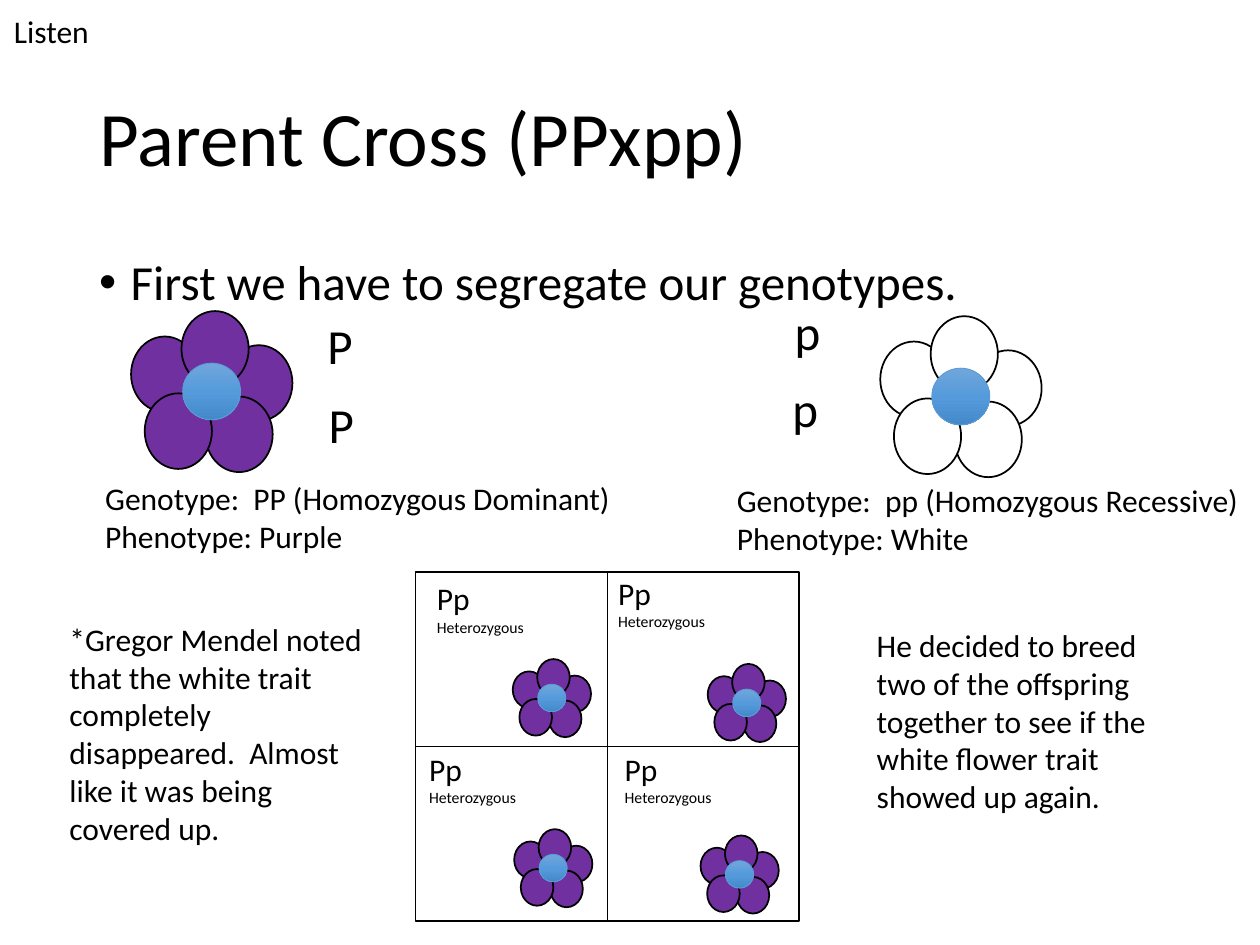
from lxml import etree
from pptx import Presentation
from pptx.dml.color import RGBColor
from pptx.enum.shapes import MSO_CONNECTOR, MSO_SHAPE
from pptx.enum.text import MSO_ANCHOR, MSO_AUTO_SIZE, PP_ALIGN
from pptx.oxml.ns import qn
from pptx.util import Pt

ELLIPSE, RECTANGLE = MSO_SHAPE.OVAL, MSO_SHAPE.RECTANGLE
STRAIGHT = MSO_CONNECTOR.STRAIGHT
LEFT, MIDDLE = PP_ALIGN.LEFT, MSO_ANCHOR.MIDDLE
GROW, FIXED = MSO_AUTO_SIZE.SHAPE_TO_FIT_TEXT, MSO_AUTO_SIZE.NONE

FONT = "Calibri"
COLORS = {
    "black": "000000",
    "white": "FFFFFF",
    "purple": "7030A0",
    "centre_line": "5B9BD5",
}
CENTRE_GRADIENT = [(0, "71A6DB"), (50, "559BDB"), (100, "448ACA")]

# Full-size flower, measured from its top left corner
PETALS = [(0, 14.5), (53.8, 19.5), (42.5, 48.8), (7.8, 47), (28.8, 0)]
PETAL_SIZE = (38.4, 43.2)
CENTRE = (29.5, 29.7, 33.1, 32.4)
SMALL = 0.485

OFFSPRING = [("Pp", 18), ("Heterozygous", 9)]


def rgb(name):
    return RGBColor.from_string(COLORS[name])


def place(shape, left, top, width, height):
    shape.left, shape.top = Pt(left), Pt(top)
    shape.width, shape.height = Pt(width), Pt(height)


def write_lines(text_frame, lines):
    """Write one paragraph for each (text, size) pair."""
    for index, (text, size) in enumerate(lines):
        paragraph = text_frame.paragraphs[0] if index == 0 else text_frame.add_paragraph()
        paragraph.alignment = LEFT
        run = paragraph.add_run()
        run.text = text
        run.font.name = FONT
        run.font.size = Pt(size)
        run.font.color.rgb = rgb("black")


def add_text(slide, box, lines):
    text_box = slide.shapes.add_textbox(*map(Pt, box))
    text_frame = text_box.text_frame
    text_frame.word_wrap = True
    text_frame.auto_size = GROW
    write_lines(text_frame, lines)


def fill_placeholder(placeholder, box, text, size):
    place(placeholder, *box)
    text_frame = placeholder.text_frame
    text_frame.auto_size = FIXED
    write_lines(text_frame, [(text, size)])
    paragraph = text_frame.paragraphs[0]
    paragraph.line_spacing = 0.9
    return paragraph


def add_title(slide, text):
    fill_placeholder(slide.shapes.title, (49.5, 28.8, 621, 104.4), text, 44)
    slide.shapes.title.text_frame.vertical_anchor = MIDDLE


def add_body(slide, text):
    paragraph = fill_placeholder(slide.placeholders[1], (49.5, 144, 621, 342.7), text, 28)
    paragraph.space_before = Pt(10)
    properties = paragraph._p.get_or_add_pPr()
    properties.set("marL", str(Pt(18)))
    properties.set("indent", str(Pt(-18)))
    etree.SubElement(properties, qn("a:buFont")).set("typeface", "Arial")
    etree.SubElement(properties, qn("a:buChar")).set("char", "•")


def add_outlined(shapes, kind, box, line_color, line_width):
    shape = shapes.add_shape(kind, *map(Pt, box))
    shape.shadow.inherit = False
    shape.line.color.rgb = rgb(line_color)
    shape.line.width = Pt(line_width)
    return shape


def fill_solid(shape, color):
    shape.fill.solid()
    shape.fill.fore_color.rgb = rgb(color)


def fill_centre_gradient(shape):
    """Fill from top to bottom with the three stops of a flower centre."""
    shape.fill.gradient()
    shape.fill.gradient_angle = 270
    stops = shape._element.spPr.find(".//" + qn("a:gsLst"))
    for stop in list(stops):
        stops.remove(stop)
    for percent, color in CENTRE_GRADIENT:
        stop = etree.SubElement(stops, qn("a:gs"), pos=str(percent * 1000))
        etree.SubElement(stop, qn("a:srgbClr"), val=color)


def add_flower(slide, left, top, color, scale=1):
    group = slide.shapes.add_group_shape()

    def scaled(x, y, width, height):
        return left + x * scale, top + y * scale, width * scale, height * scale

    for x, y in PETALS:
        petal = add_outlined(group.shapes, ELLIPSE, scaled(x, y, *PETAL_SIZE), "black", 1)
        fill_solid(petal, color)
    centre = add_outlined(group.shapes, ELLIPSE, scaled(*CENTRE), "centre_line", 0.5)
    fill_centre_gradient(centre)


def add_punnett_square(slide, left, top, width, height):
    group = slide.shapes.add_group_shape()
    square = add_outlined(group.shapes, RECTANGLE, (left, top, width, height), "black", 1)
    fill_solid(square, "white")
    middle_x, middle_y = left + width / 2, top + height / 2
    dividers = [
        (middle_x, top, middle_x, top + height),
        (left, middle_y, left + width, middle_y),
    ]
    for ends in dividers:
        divider = group.shapes.add_connector(STRAIGHT, *map(Pt, ends))
        divider.line.color.rgb = rgb("black")
        divider.line.width = Pt(0.5)
        etree.SubElement(divider._element.spPr, qn("a:effectLst"))


def main():
    presentation = Presentation()
    presentation.slide_width, presentation.slide_height = Pt(720), Pt(540)
    slide = presentation.slides.add_slide(presentation.slide_layouts[1])

    add_title(slide, "Parent Cross (PPxpp)")
    add_body(slide, "First we have to segregate our genotypes.")

    add_flower(slide, 74.9, 177.8, "purple")
    add_flower(slide, 503, 180.7, "white")
    add_text(slide, (53, 270, 322.6, 51),
             [("Genotype:  PP (Homozygous Dominant)", 18), ("Phenotype: Purple", 18)])
    add_text(slide, (414, 271.5, 306, 51),
             [("Genotype:  pp (Homozygous Recessive)", 18), ("Phenotype: White", 18)])

    add_punnett_square(slide, 237.4, 326.9, 219.4, 199.4)
    alleles = [("P", 180, 177), ("p", 447, 168.5), ("P", 180.7, 221.8), ("p", 445.7, 213)]
    for allele, left, top in alleles:
        add_text(slide, (left, top, 28, 41), [(allele, 28)])

    cells = [
        ((242.6, 327.6), (293, 376.6)),
        ((346.1, 324.7), (404.4, 379.4)),
        ((238.1, 424.8), (293.8, 473.8)),
        ((349.9, 424.8), (400.3, 477.4)),
    ]
    for (text_left, text_top), (flower_left, flower_top) in cells:
        add_text(slide, (text_left, text_top, 67.7, 40.3), OFFSPRING)
        add_flower(slide, flower_left, flower_top, "purple", SMALL)

    add_text(slide, (32.6, 350.6, 181.4, 138.2),
             [("*Gregor Mendel noted that the white trait completely disappeared.  "
               "Almost like it was being covered up.", 18)])
    add_text(slide, (493.9, 354.2, 181.4, 116.6),
             [("He decided to breed two of the offspring together to see if the "
               "white flower trait showed up again.", 18)])
    add_text(slide, (0.9, 3.6, 133.2, 28.8), [("Listen", 18)])

    presentation.save("out.pptx")


if __name__ == "__main__":
    main()
